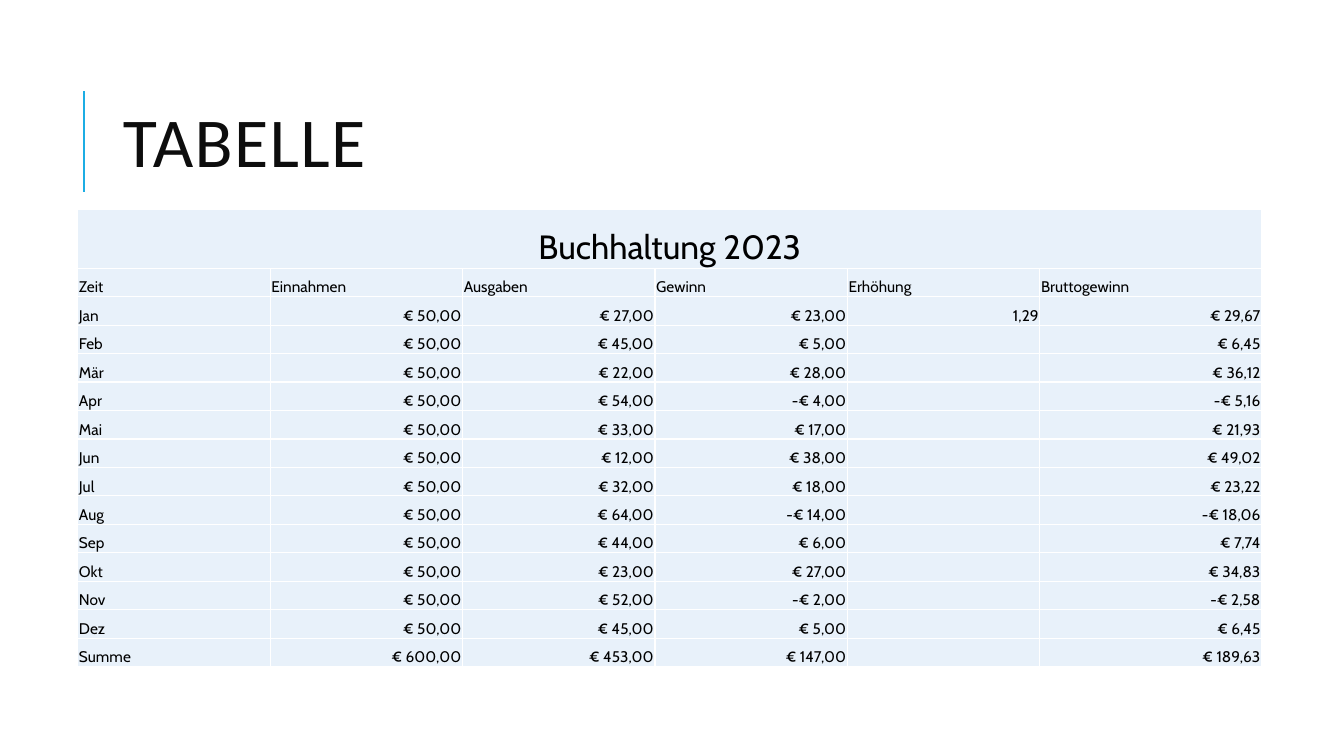
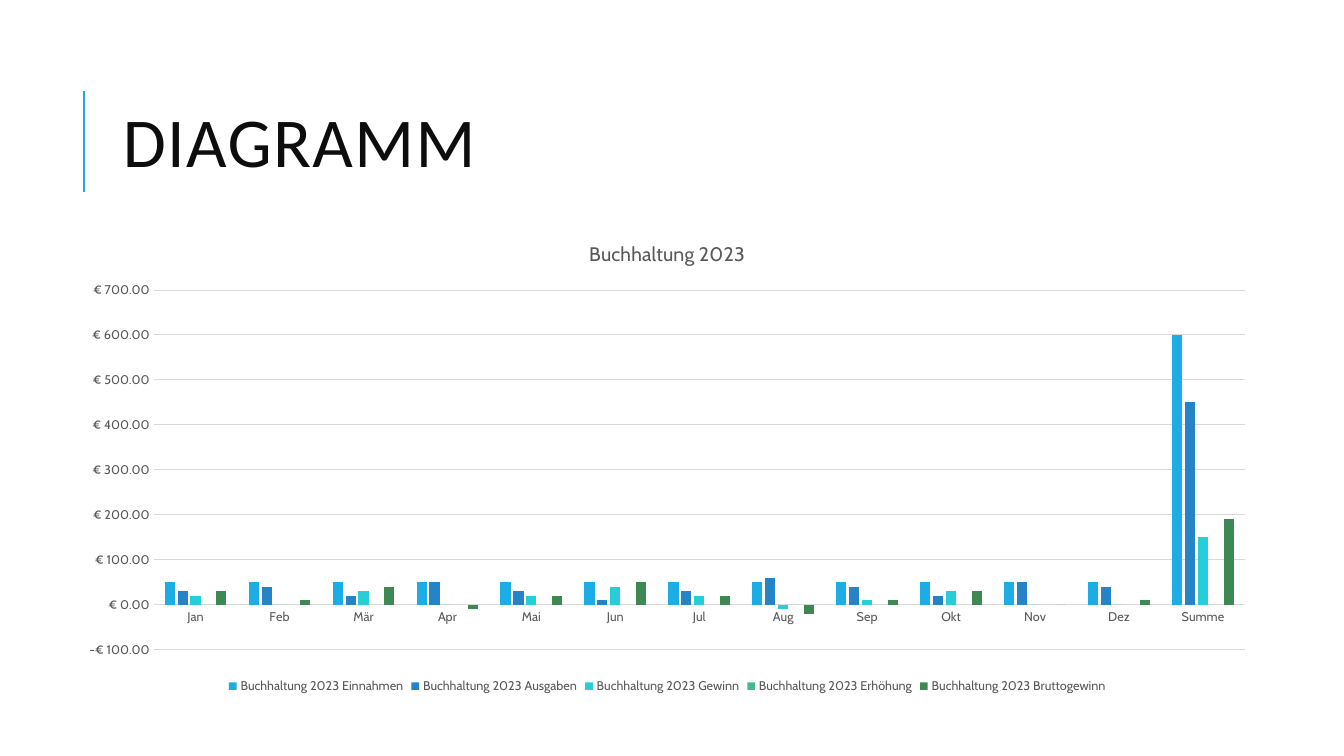
"""Build a bookkeeping deck with one table slide and one chart slide."""
from dataclasses import dataclass

from lxml import etree
from pptx import Presentation
from pptx import util as u
from pptx.chart import data as cd
from pptx.dml import color as col
from pptx.enum import chart as ch, shapes as sh, text as tx
from pptx.oxml import ns


@dataclass(frozen=True)
class Theme:
    ink: str = "0D0D0D"
    black: str = "000000"
    gray: str = "595959"
    grid: str = "D9D9D9"
    white: str = "FFFFFF"
    cell: str = "E8F1FA"
    bars: tuple[str, ...] = ("1CADE4", "2683C6", "27CED7", "42BA97", "3E8853")
    head: str = "Calibri"
    body: str = "Cabin"
    title: int = 50
    large: int = 24
    mid: int = 14
    text: int = 11
    small: int = 9


@dataclass(frozen=True)
class Entry:
    time: str
    income: float
    cost: float
    rise: float | None = None

    @property
    def gain(self) -> float:
        return self.income - self.cost

    @property
    def gross(self) -> float:
        return round(self.gain * RATE, 2)

    @property
    def tens(self) -> list[int | None]:
        sums = self.income, self.cost, self.gain, self.rise, self.gross
        return [None if val is None else int(round(val, -1)) for val in sums]


LOOK = Theme()
RATE = 1.29
NAME = "Buchhaltung 2023"
MONEY = '"€"\\ #,##0.00'
HEADS = ("Zeit", "Einnahmen", "Ausgaben", "Gewinn", "Erhöhung", "Bruttogewinn")
COSTS = {"Jan": 27, "Feb": 45, "Mär": 22, "Apr": 54, "Mai": 33, "Jun": 12,
         "Jul": 32, "Aug": 64, "Sep": 44, "Okt": 23, "Nov": 52, "Dez": 45}
MONTHS = [Entry(m, 50, c, RATE if m == "Jan" else None) for m, c in COSTS.items()]
BOOK = MONTHS + [Entry("Summe", sum(e.income for e in MONTHS), sum(e.cost for e in MONTHS))]


def rgb(code: str) -> col.RGBColor:
    return col.RGBColor.from_string(code)


def style(font, size: int, code: str, face: str = LOOK.body) -> None:
    font.size, font.name, font.bold = u.Pt(size), face, False
    font.color.rgb = rgb(code)


def comma(val: float) -> str:
    return f"{val:.2f}".replace(".", ",")


def euro(val: float) -> str:
    return f"{'-' if val < 0 else ''}€ {comma(abs(val))}"


def cells(entry: Entry) -> list[str]:
    rise = comma(entry.rise) if entry.rise else ""
    return [entry.time, *map(euro, (entry.income, entry.cost, entry.gain)), rise, euro(entry.gross)]


def place(layout) -> None:
    title = layout.placeholders[0]
    title.left, title.top = u.Cm(2.84), u.Cm(1.63)
    title.width, title.height = u.Cm(27), u.Cm(4.17)
    frame = title.text_frame
    frame.vertical_anchor = tx.MSO_ANCHOR.MIDDLE
    frame.word_wrap, frame.auto_size = True, tx.MSO_AUTO_SIZE.NONE


def mark(layout, slide) -> None:
    bar = slide.shapes.add_connector(
        sh.MSO_CONNECTOR.STRAIGHT, u.Cm(2.11), u.Cm(4.83), u.Cm(2.11), u.Cm(2.29))
    bar.line.color.rgb, bar.line.width = rgb(LOOK.bars[0]), u.Pt(1.5)
    etree.SubElement(bar.element.find(ns.qn("p:spPr")), ns.qn("a:effectLst"))
    next(bar.element.iter(ns.qn("p:cNvPr"))).set("id", "20")
    layout.shapes.element.append(bar.element)


def start(deck, layout, text: str):
    slide = deck.slides.add_slide(layout)
    title = slide.shapes.title
    title.text_frame.text = text
    para = title.text_frame.paragraphs[0]
    para.alignment, para.line_spacing = tx.PP_ALIGN.LEFT, 0.8
    style(para.runs[0].font, LOOK.title, LOOK.ink, LOOK.head)
    for props in title.element.iter(ns.qn("a:rPr")):
        props.set("spc", "100")
    return slide


def fill(cell, text: str, size: int, align) -> None:
    cell.fill.solid()
    cell.fill.fore_color.rgb = rgb(LOOK.cell)
    cell.vertical_anchor = tx.MSO_ANCHOR.BOTTOM
    cell.margin_left = cell.margin_right = cell.margin_top = u.Cm(0.03)
    cell.margin_bottom = 0
    para = cell.text_frame.paragraphs[0]
    para.alignment = align
    if text:
        para.text = text
        style(para.runs[0].font, size, LOOK.black)


def edge(root) -> None:
    for props in root.iter(ns.qn("a:tcPr")):
        for spot, side in enumerate(("lnL", "lnR", "lnT", "lnB")):
            line = etree.Element(ns.qn(f"a:{side}"), w=str(u.Pt(1)))
            paint = etree.SubElement(line, ns.qn("a:solidFill"))
            etree.SubElement(paint, ns.qn("a:srgbClr"), val=LOOK.white)
            props.insert(spot, line)
    for para in root.iter(ns.qn("a:p")):
        if para.find(ns.qn("a:r")) is None:
            etree.SubElement(para, ns.qn("a:endParaRPr"), sz=str(LOOK.text * 100))


def add_grid(slide) -> None:
    wide = [4.85] * 5 + [5.59]
    rows = [[NAME] + [""] * 5, list(HEADS), *map(cells, BOOK)]
    lines = len(rows) - 1
    tall = [1.48] + [10.04 / lines] * lines
    frame = slide.shapes.add_table(
        len(rows), len(wide), u.Cm(1.96), u.Cm(5.28), u.Cm(sum(wide)), u.Cm(sum(tall)))
    table = frame.table
    table.first_row = table.horz_banding = False
    for column, width in zip(table.columns, wide):
        column.width = u.Cm(width)
    for r, (row, height) in enumerate(zip(rows, tall)):
        table.rows[r].height = u.Cm(height)
        for c, text in enumerate(row):
            align = tx.PP_ALIGN.RIGHT if r > 1 and c else tx.PP_ALIGN.LEFT
            if r == 0:
                align = tx.PP_ALIGN.CENTER
            fill(table.cell(r, c), text, LOOK.text if r else LOOK.large, align)
    table.cell(0, 0).merge(table.cell(0, len(wide) - 1))
    edge(frame.element)


def add_plot(slide) -> None:
    data = cd.CategoryChartData(number_format=MONEY)
    data.categories = [e.time for e in BOOK]
    for head, vals in zip(HEADS[1:], zip(*(e.tens for e in BOOK))):
        data.add_series(f"{NAME} {head}", vals)
    chart = slide.shapes.add_chart(
        ch.XL_CHART_TYPE.COLUMN_CLUSTERED, u.Cm(1.65), u.Cm(5.59), u.Cm(30.33), u.Cm(12), data).chart
    style(chart.font, LOOK.small, LOOK.gray)
    chart.has_title = True
    chart.chart_title.include_in_layout = False
    chart.chart_title.text_frame.text = NAME
    style(chart.chart_title.text_frame.paragraphs[0].runs[0].font, LOOK.mid, LOOK.gray)
    chart.has_legend = True
    chart.legend.position = ch.XL_LEGEND_POSITION.BOTTOM
    chart.legend.include_in_layout = False
    style(chart.legend.font, LOOK.small, LOOK.gray)
    plot = chart.plots[0]
    plot.gap_width, plot.overlap, plot.vary_by_categories = 219, -27, False
    for series, code in zip(plot.series, LOOK.bars):
        series.format.fill.solid()
        series.format.fill.fore_color.rgb = rgb(code)
        series.invert_if_negative = False
    cat, val = chart.category_axis, chart.value_axis
    for axis in (cat, val):
        axis.major_tick_mark = axis.minor_tick_mark = ch.XL_TICK_MARK.NONE
        style(axis.tick_labels.font, LOOK.small, LOOK.gray)
    val.minimum_scale, val.maximum_scale, val.major_unit = -100, 700, 100
    val.tick_labels.number_format = MONEY
    val.tick_labels.number_format_is_linked = False
    val.format.line.fill.background()
    for line in (cat.format.line, val.major_gridlines.format.line):
        line.color.rgb, line.width = rgb(LOOK.grid), u.Pt(0.75)


def main() -> None:
    deck = Presentation()
    deck.slide_width, deck.slide_height = u.Cm(33.87), u.Cm(19.05)
    layout = deck.slide_layouts[5]
    place(layout)
    first = start(deck, layout, "TABELLE")
    mark(layout, first)
    add_grid(first)
    add_plot(start(deck, layout, "DIAGRAMM"))
    deck.save("out.pptx")


if __name__ == "__main__":
    main()
